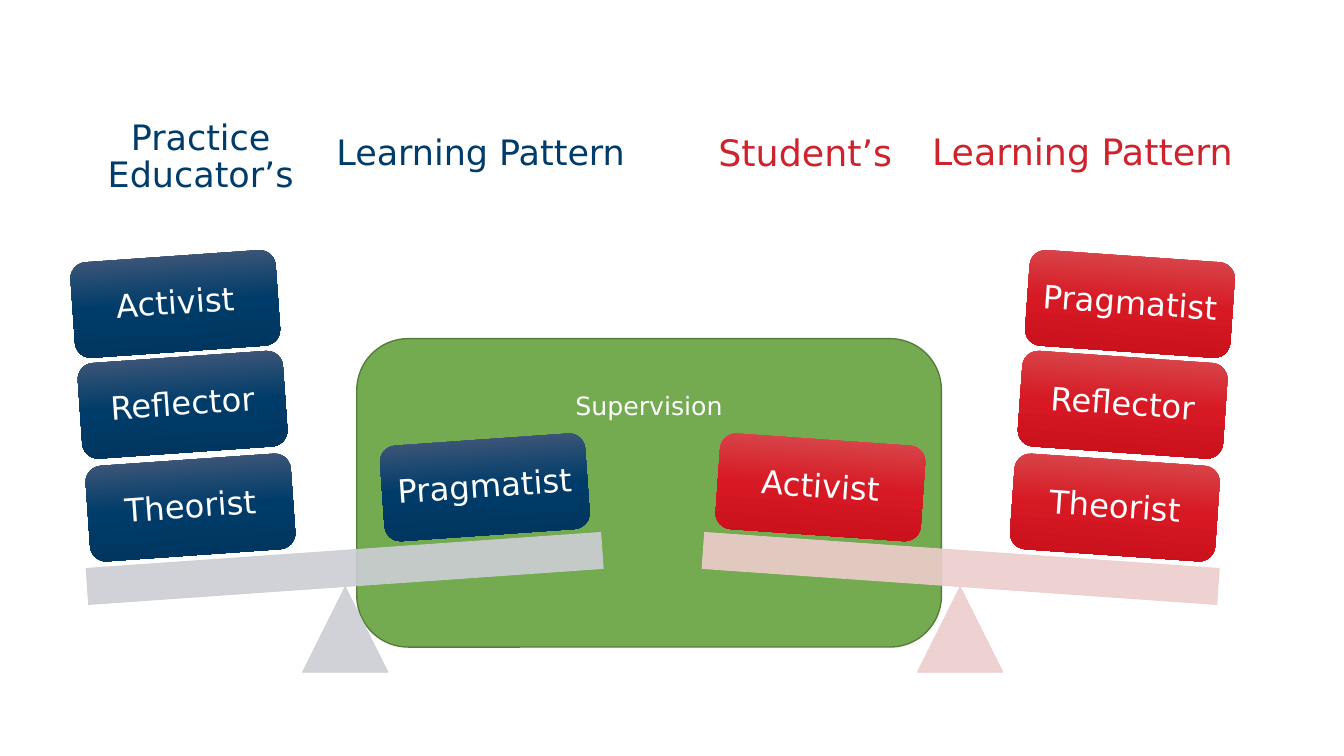
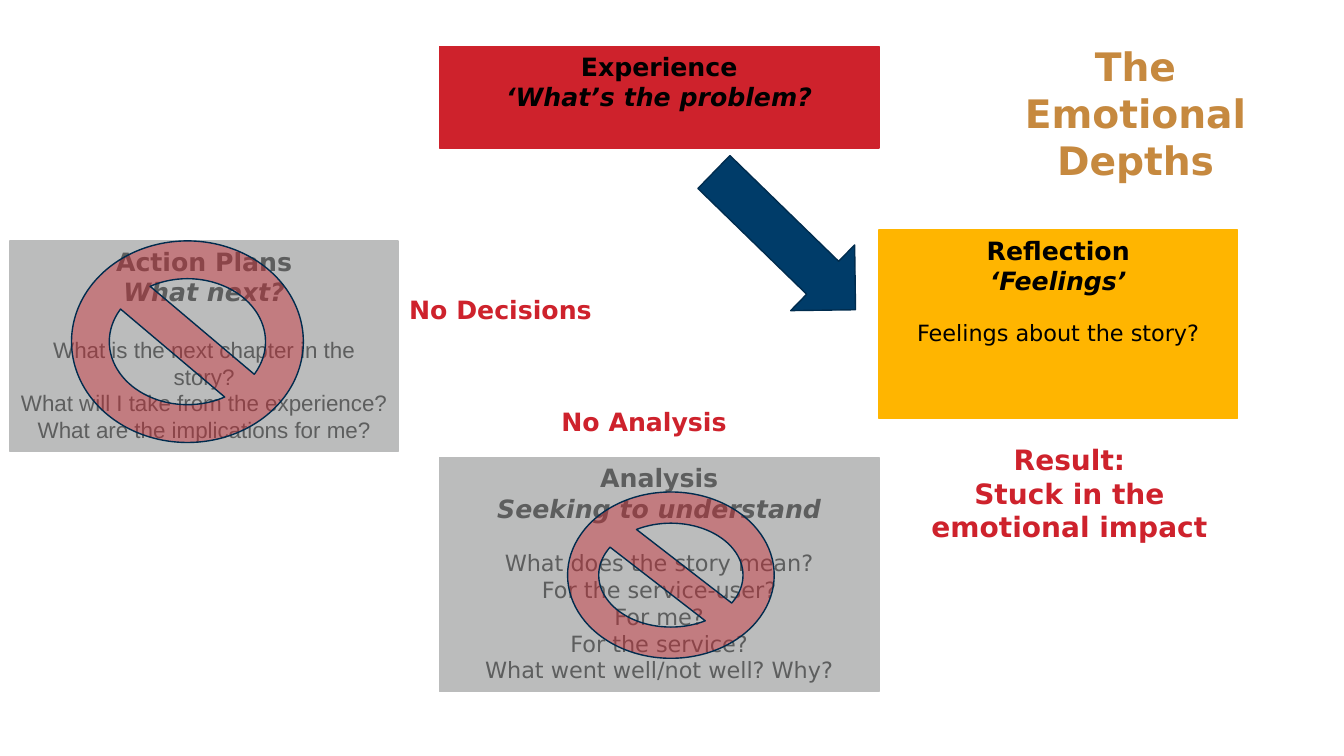
import copy
from dataclasses import dataclass

import pptx
import pptx.dml.color
import pptx.enum.shapes
import pptx.enum.text
import pptx.oxml
import pptx.oxml.ns
import pptx.util

Pt = pptx.util.Pt
SHAPE = pptx.enum.shapes.MSO_SHAPE
ALIGN = pptx.enum.text.PP_ALIGN
ANCHOR = pptx.enum.text.MSO_ANCHOR


@dataclass(frozen=True)
class Theme:
    font: str = "DejaVu Sans"
    plain_font: str = "Arial"
    white: str = "FFFFFF"
    black: str = "000000"
    navy: str = "003C69"
    navy_edge: str = "002C4E"
    red: str = "CE222C"
    amber: str = "FFB500"
    bronze: str = "C6893F"
    green: str = "74AA50"
    green_edge: str = "567E3B"
    gray: str = "BBBCBC"
    gray_text: str = "5D5E5E"
    navy_blocks: tuple = ("4B5C7B", "003C69", "00355D")
    red_blocks: tuple = ("D84F53", "D71924", "C60F1A")
    navy_scale: str = "CCCED4"
    red_scale: str = "EDCDCD"
    title: int = 28
    block: int = 23
    result: int = 20
    heading: int = 18
    body: int = 16


T = Theme()

# Slide 1 content: blocks run from the bottom of the stack up, then the one in supervision
SCALES = [
    dict(mirrored=True, ink=T.red, size=26, blocks=T.red_blocks, scale=T.red_scale,
         headings=[("Student’s", (470.2, 72, 210.2, 77)),
                   ("Learning Pattern", (654.5, 71.3, 237.6, 77))],
         patterns=["Theorist", "Reflector", "Pragmatist", "Activist"]),
    dict(mirrored=False, ink=T.navy, size=25, blocks=T.navy_blocks, scale=T.navy_scale,
         headings=[("Practice Educator’s", (18, 77, 250.6, 71.3)),
                   ("Learning Pattern", (224.6, 71.3, 237.6, 77))],
         patterns=["Theorist", "Reflector", "Activist", "Pragmatist"]),
]
MIRROR_WIDTH = 932.4
TILT = 4
BLOCK_SIZE = (146.9, 68.4)
BLOCK_SPOTS = [(62.6, 328.3), (57, 254.9), (51.8, 182.9), (272.9, 313.9)]
BEAM = (61.9, 393.1, 368.6, 25.9)
PIVOT = (216, 419, 61.2, 61.2)
SUPERVISION = (254.9, 241.9, 417.6, 220.3)

# Slide 2 content: heading, italic question, body lines
STAGES = [
    dict(box=(627.8, 164.2, 256.3, 134.6), fill=T.amber, ink=T.black, font=T.font,
         heading="Reflection", question="‘Feelings’", gap=21, spacing=0.8,
         lines=["Feelings about the story?"]),
    dict(box=(313.9, 33.1, 313.9, 72.7), fill=T.red, ink=T.black, font=T.font,
         heading="Experience", question="‘What’s the problem?", lines=[]),
    dict(box=(313.9, 326.9, 313.9, 167), fill=T.gray, ink=T.gray_text, font=T.font,
         heading="Analysis", question="Seeking to understand", gap=18.6, spacing=1,
         lines=["What does the story mean?", "For the service-user?", "For me?",
                "For the service?", "What went well/not well? Why?"]),
    dict(box=(7.2, 172.1, 277.2, 150.5), fill=T.gray, ink=T.gray_text, font=T.plain_font,
         heading="Action Plans", question="What next?", gap=21, spacing=1,
         lines=["What is the next chapter in the story?",
                "What will I take from the experience?",
                "What are the implications for me?"]),
]
REMARKS = [
    (["The Emotional Depths"], (718.6, 26.6, 185, 108.7), T.title, T.bronze),
    (["No Decisions"], (284.4, 206.6, 146.2, 28.8), T.heading, T.red),
    (["No Analysis"], (393.1, 286.6, 133.9, 28.8), T.heading, T.red),
    (["Result:", "Stuck in the emotional impact"], (643.7, 312.5, 240.5, 79.9), T.result, T.red),
]
BANS = [(51.1, 172.1, 165.6, 144), (405.4, 351.4, 147.6, 118.8)]
ARROW = (527.8, 101.5, 65.5, 141.1)
ARROW_ANGLE = 314.2


# Shared drawing helpers
def rgb(color):
    return pptx.dml.color.RGBColor.from_string(color)


def add_alpha(fill_owner, percent):
    for color in fill_owner.iter(pptx.oxml.ns.qn("a:srgbClr")):
        alpha = pptx.oxml.parse_xml(
            f'<a:alpha {pptx.oxml.ns.nsdecls("a")} val="{percent * 1000}"/>')
        color.append(alpha)


def draw(slide, kind, box, fill=None, edge=None, width=1, angle=0):
    shape = slide.shapes.add_shape(kind, *map(Pt, box))
    shape.shadow.inherit = False
    shape.rotation = angle
    if fill:
        shape.fill.solid()
        shape.fill.fore_color.rgb = rgb(fill)
    if edge:
        shape.line.color.rgb = rgb(edge)
        shape.line.width = Pt(width)
    else:
        shape.line.fill.background()
    return shape


def shade(shape, colors):
    shape.fill.gradient()
    shape.fill.gradient_angle = 270
    stops = shape._element.spPr.find(".//" + pptx.oxml.ns.qn("a:gsLst"))
    stops.insert(1, copy.deepcopy(stops[0]))
    for stop, color, position in zip(shape.fill.gradient_stops, colors, (0, 0.5, 1)):
        stop.color.rgb = rgb(color)
        stop.position = position


def write(shape, lines, size, ink, anchor=ANCHOR.TOP, bold=False, font=T.font, spacing=None,
          inset=None):
    frame = shape.text_frame
    frame.word_wrap = True
    frame.vertical_anchor = anchor
    if inset is not None:
        frame.margin_left = frame.margin_right = Pt(inset)
        frame.margin_top = frame.margin_bottom = Pt(inset)
    frame.text = "\n".join(lines)
    for paragraph in frame.paragraphs:
        paragraph.alignment = ALIGN.CENTER
        if spacing:
            paragraph.line_spacing = spacing
        for run in paragraph.runs:
            run.font.name, run.font.size, run.font.bold = font, Pt(size), bold
            run.font.color.rgb = rgb(ink)
    return frame


def add_label(slide, box, *args, **style):
    return write(slide.shapes.add_textbox(*map(Pt, box)), *args, **style)


# Slide 1: two balances meeting in supervision
def add_scale(slide, side):
    angle = TILT if side["mirrored"] else -TILT

    def place(box):
        left, top, width, height = box
        return (MIRROR_WIDTH - left - width if side["mirrored"] else left, top, width, height)

    for heading, box in side["headings"]:
        add_label(slide, box, [heading], side["size"], side["ink"], anchor=ANCHOR.MIDDLE,
                  spacing=0.9, inset=7.5)
    for kind, box, turn in ((SHAPE.ISOSCELES_TRIANGLE, PIVOT, 0), (SHAPE.RECTANGLE, BEAM, angle)):
        part = draw(slide, kind, place(box), side["scale"], side["scale"], 0.5, turn)
        add_alpha(part._element.spPr, 90)
    for pattern, spot in zip(side["patterns"], BLOCK_SPOTS):
        block = draw(slide, SHAPE.ROUNDED_RECTANGLE, place(spot + BLOCK_SIZE), angle=angle)
        shade(block, side["blocks"])
        write(block, [pattern], T.block, T.white, anchor=ANCHOR.MIDDLE, spacing=0.9, inset=5)


def build_balance(slide):
    supervision = draw(slide, SHAPE.ROUNDED_RECTANGLE, SUPERVISION, T.green, T.green_edge)
    frame = write(supervision, ["Supervision"], T.heading, T.white)
    frame.margin_top = Pt(26)
    for side in SCALES:
        add_scale(slide, side)


# Slide 2: the reflective cycle stopped at feelings
def add_stage(slide, stage):
    panel = draw(slide, SHAPE.RECTANGLE, stage["box"], stage["fill"], stage["fill"])
    titles = [stage["heading"], stage["question"]]
    frame = write(panel, titles + stage["lines"], T.heading, stage["ink"], bold=True)
    frame.paragraphs[1].runs[0].font.italic = True
    body = frame.paragraphs[len(titles):]
    for paragraph in body:
        paragraph.line_spacing = stage["spacing"]
        font = paragraph.runs[0].font
        font.name, font.size, font.bold = stage["font"], Pt(T.body), False
    if body:
        body[0].space_before = Pt(stage["gap"])


def build_cycle(slide):
    for stage in STAGES:
        add_stage(slide, stage)
    for lines, box, size, ink in REMARKS:
        add_label(slide, box, lines, size, ink, bold=True)
    for box in BANS:
        ban = draw(slide, SHAPE.NO_SYMBOL, box, T.red)
        add_alpha(ban._element.spPr, 41)
        ban.line.color.rgb = rgb(T.navy_edge)
        ban.line.width = Pt(1)
    draw(slide, SHAPE.DOWN_ARROW, ARROW, T.navy, T.navy_edge, angle=ARROW_ANGLE)


def main():
    deck = pptx.Presentation()
    deck.slide_width, deck.slide_height = Pt(960), Pt(540)
    for build in (build_balance, build_cycle):
        build(deck.slides.add_slide(deck.slide_layouts[6]))
    deck.save("out.pptx")


if __name__ == "__main__":
    main()
